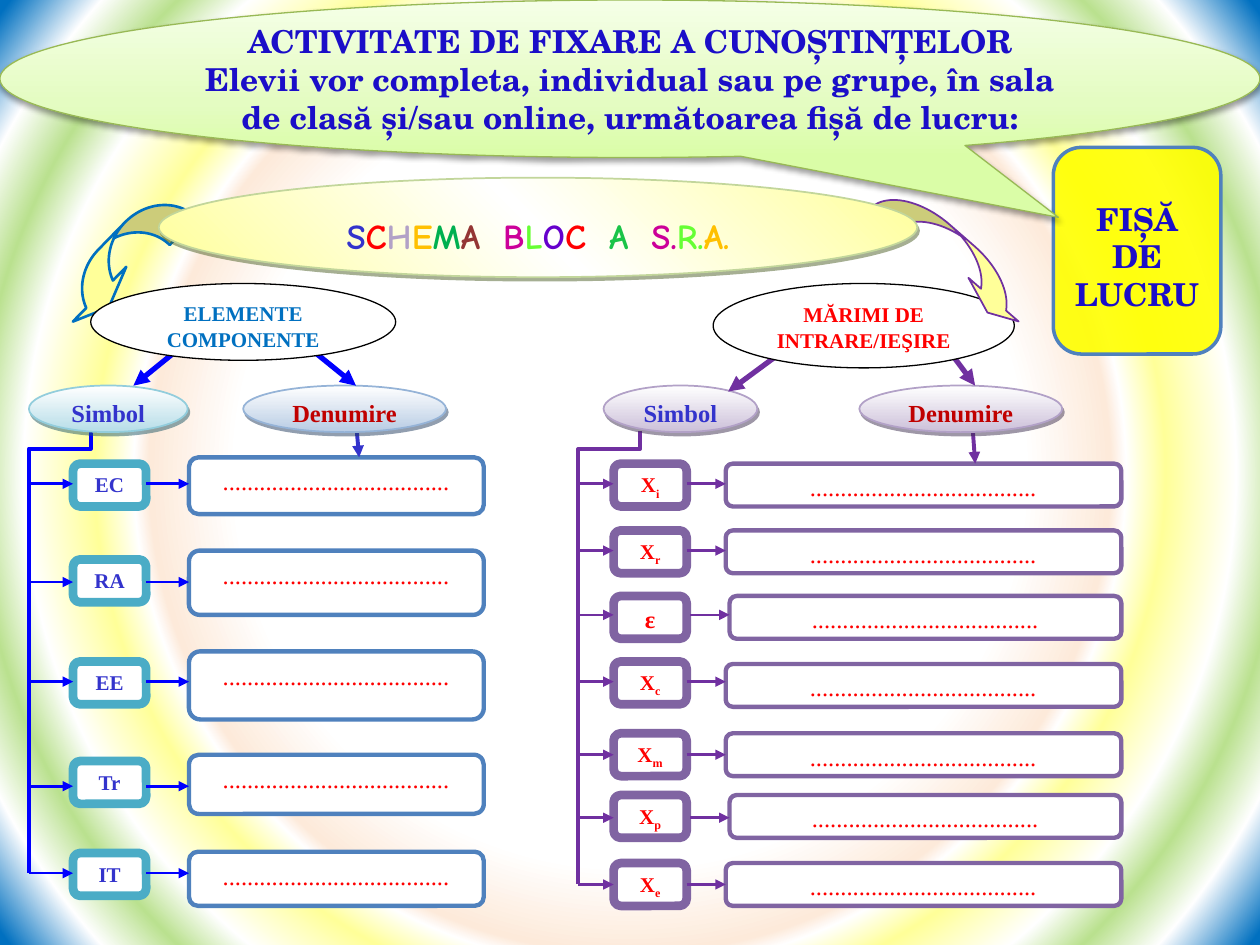
import pptx
import pptx.util
import pptx.dml.color
import pptx.enum.shapes
import pptx.enum.text
import pptx.oxml.ns
from lxml import etree

RGB = pptx.dml.color.RGBColor
KIND = pptx.enum.shapes.MSO_SHAPE
LINK = pptx.enum.shapes.MSO_CONNECTOR
ANCHOR = pptx.enum.text.MSO_ANCHOR
qn = pptx.oxml.ns.qn

# Colours
WHITE, BLACK = RGB(255, 255, 255), RGB(0, 0, 0)
RED, DARK, GOLD = RGB(255, 0, 0), RGB(0xC0, 0, 0), RGB(0xFF, 0xC0, 0)
YELLOW, CREAM, PEACH = RGB(255, 255, 0), RGB(255, 255, 0x99), RGB(0xFD, 0xEA, 0xDA)
BLUE, INDIGO, INK = RGB(0, 0, 255), RGB(0x33, 0x33, 0xCC), RGB(0x1B, 0x0E, 0xC8)
SKY, STEEL, TEAL = RGB(0, 0x70, 0xC0), RGB(0x4F, 0x81, 0xBD), RGB(0x4B, 0xAC, 0xC6)
PLUM, MAUVE, LILAC = RGB(0x70, 0x30, 0xA0), RGB(0x80, 0x64, 0xA2), RGB(0xB2, 0xA1, 0xC7)
GREEN, LIME, LEAF = RGB(0, 0xB0, 0x50), RGB(0x66, 0xFF, 0x33), RGB(0xBA, 0xE1, 0x8F)
BROWN, PINK = RGB(0x94, 0x36, 0x34), RGB(0xCC, 0, 0x99)
VIOLET, MINT = RGB(0x66, 0, 0xCC), RGB(0x1A, 0xC4, 0x47)
OLIVE, MOSS, SAGE = RGB(0x98, 0xB9, 0x55), RGB(0x4E, 0x61, 0x28), RGB(0xC2, 0xD6, 0x9B)
LIGHT = (RGB(0xDA, 0xFD, 0xA7), RGB(0xE4, 0xFC, 0xC2), RGB(0xF5, 0xFF, 0xE7))
# Ellipse styles: gradient end, line, shadow
AQUA = RGB(0xB6, 0xDD, 0xE8), RGB(0x92, 0xCD, 0xDC), RGB(0x20, 0x58, 0x67)
AZURE = RGB(0xB8, 0xCC, 0xE4), RGB(0x95, 0xB3, 0xD7), RGB(0x24, 0x3F, 0x60)
GRAPE = RGB(0xCC, 0xC0, 0xD9), LILAC, RGB(0x3F, 0x31, 0x51)

SERIF, SCHOOL, COMIC = "Times New Roman", "TeX Gyre Schola", "Comic Neue"
DOTS = "." * 37

# Grid of 100 columns by 75 rows
deck = pptx.Presentation()
deck.slide_width, deck.slide_height = pptx.util.Inches(10), pptx.util.Inches(7.5)
CELL = deck.slide_width // 100
slide = deck.slides.add_slide(deck.slide_layouts[6])


def grid(*cells):
    return [round(c * CELL) for c in cells]


def node(parent, tag, **attrs):
    return etree.SubElement(parent, qn("a:" + tag), {k: str(v) for k, v in attrs.items()})


def tint(parent, color, alpha=100):
    node(node(parent, "srgbClr", val=color), "alpha", val=alpha * 1000)


def blend(owner, fill, stops, angle=None):
    """Gradient of (percent, colour) stops; circular without an angle."""
    fill.gradient()
    grad = owner.find(".//" + qn("a:gradFill"))
    for child in list(grad):
        grad.remove(child)
    steps = node(grad, "gsLst")
    for pos, color in stops:
        tint(node(steps, "gs", pos=pos * 1000), color)
    if angle is None:
        node(node(grad, "path", path="circle"), "fillToRect", l=50000, t=50000, r=50000, b=50000)
    else:
        node(grad, "lin", ang=angle * 60000, scaled=0)


def shade(shape, color, alpha=50, blur=0, dist=2.2, angle=63):
    effects = shape._element.spPr.find(qn("a:effectLst"))
    tint(node(effects, "outerShdw", blurRad=round(blur * 12700), dist=round(dist * 12700),
              dir=angle * 60000, algn="ctr", rotWithShape=0), color, alpha)


def draw(kind, box, fill, line, width, angle=90, adj=()):
    shape = slide.shapes.add_shape(kind, *grid(*box))
    shape.shadow.inherit = False
    for i, value in enumerate(adj):
        shape.adjustments[i] = value
    if isinstance(fill, list):
        blend(shape._element, shape.fill, fill, angle)
    else:
        shape.fill.solid()
        shape.fill.fore_color.rgb = fill
    shape.line.color.rgb = line
    shape.line.width = pptx.util.Pt(width)
    return shape


def write(shape, text, size=12, color=RED, font=SERIF, bold=True, after=0, top=0.5,
          anchor=ANCHOR.TOP):
    """Fill a shape with lines; a line is a string or a list of (text, attributes, colour)."""
    frame = shape.text_frame
    frame.word_wrap, frame.vertical_anchor = True, anchor
    frame.margin_top = grid(top)[0]
    for i, line in enumerate(text if isinstance(text, list) else [text]):
        para = frame.add_paragraph() if i else frame.paragraphs[0]
        para.alignment = pptx.enum.text.PP_ALIGN.CENTER
        para.space_after = pptx.util.Pt(after)
        for part, attrs, ink in [(line, {}, color)] if isinstance(line, str) else line:
            run = para.add_run()
            run.text = part
            run.font.size, run.font.bold = pptx.util.Pt(size), bold
            run.font.name, run.font.color.rgb = font, ink
            for key, value in attrs.items():
                run.font._element.set(key, value)


def link(x1, y1, x2, y2, color, width=1.5, kind=LINK.STRAIGHT, head=True):
    wire = slide.shapes.add_connector(kind, *grid(x1, y1, x2, y2))
    wire.line.color.rgb, wire.line.width = color, pptx.util.Pt(width)
    if head:
        node(wire.line._get_or_add_ln(), "tailEnd", type="triangle")
    node(wire._element.spPr, "effectLst")
    return wire


def rail(x1, y1, x2, y2, color):
    """Elbow that leaves downwards, turned a quarter about its centre."""
    mx, my, dx, dy = (x1 + x2) / 2, (y1 + y2) / 2, (x1 - x2) / 2, (y2 - y1) / 2
    wire = link(mx - dy, my - dx, mx + dy, my + dx, color, 2.25, LINK.ELBOW, False)
    wire._element.spPr.find(qn("a:xfrm")).set("rot", "5400000")
    guides = wire._element.spPr.find(".//" + qn("a:avLst"))
    node(guides, "gd", name="adj1", fmla="val 4000")


def pill(box, text, color, style):
    end, line, dark = style
    shape = draw(KIND.OVAL, box, [(0, WHITE), (100, end)], line, 1)
    shade(shape, dark)
    write(shape, text, size=14, color=color, after=10)


def table(box, cols, rows, wire, drop, tag, edge, ink, styles):
    """Symbols on a rail, each leading to a blank answer."""
    x, y, w, h = box
    sign, span, name, code, reply = cols
    rail(x + 4.9, y + 3.6, x, y + rows[-1][2], wire)
    for text, top, mid, start, tall, nudge in rows:
        shape = draw(KIND.ROUNDED_RECTANGLE, (x + code, y + top, 5.8, 3.4), WHITE, tag, 5)
        label = [[(text[0], {}, ink), (text[1], {"baseline": "-25000"}, ink)]] \
            if text[0] == "X" else text
        write(shape, label, size=14 if text == "ε" else 12, color=ink, after=10)
        left = reply + nudge
        shape = draw(KIND.ROUNDED_RECTANGLE, (x + left, y + start, w - left, tall),
                     WHITE, edge, 2.5)
        write(shape, DOTS, size=14, bold=False, after=10)
        link(x, y + mid, x + code, y + mid, wire)
        link(x + code + 5.8 + nudge, y + mid, x + left, y + mid, wire)
    link(x + name + 9, y + 3.4, x + name + 9.2, y + rows[0][3], drop, 2.25)
    pill((x + sign, y, span, 3.7), "Simbol", INDIGO, styles[0])
    pill((x + name, y, 16.1, 3.7), "Denumire", DARK, styles[1])


def topic(box, text, color, wire, arrows):
    """Heading ellipse; arrows run between points given as shares of the box."""
    x, y, w, h = box
    for x1, y1, x2, y2 in arrows:
        link(x + x1 * w, y + y1 * h, x + x2 * w, y + y2 * h, wire, 3)
    write(draw(KIND.OVAL, box, WHITE, BLACK, 0.75), text, color=color, after=10)


def curl(box, turn, line, width, flip=False):
    shape = draw(KIND.CURVED_DOWN_ARROW, box, CREAM, line, width, adj=(0.8, 1.6, 0.33))
    shape.rotation = turn
    if flip:
        shape._element.spPr.find(qn("a:xfrm")).set("flipH", "1")


def banner(box):
    shape = draw(KIND.OVAL, box, [(0, CREAM), (50, WHITE), (100, CREAM)], SAGE, 1, 315)
    shade(shape, MOSS)
    inks = [("S", INDIGO), ("C", RED), ("H", LILAC), ("E", GOLD), ("M", GREEN), ("A", BROWN),
            (" ", BROWN), ("B", PINK), ("L", LIME), ("O", VIOLET), ("C", RED), (" ", RED),
            ("A", MINT), (" ", MINT), ("S.", PINK), ("R.", LIME), ("A.", GOLD)]
    runs = [(part, {"spc": "600"} if part == " " else {}, ink) for part, ink in inks]
    write(shape, [runs], size=20, font=COMIC, top=1.8)


def sheet(box):
    shape = draw(KIND.ROUNDED_RECTANGLE, box, YELLOW, STEEL, 2)
    color = shape._element.spPr.find(qn("a:solidFill") + "/" + qn("a:srgbClr"))
    node(color, "alpha", val=90000)
    write(shape, "FIȘĂ DE LUCRU", size=18, color=INK, font=SCHOOL, top=3.5)


def callout(box):
    shape = draw(KIND.OVAL_CALLOUT, box, list(zip((0, 35, 100), LIGHT)), OLIVE, 0.75, 270,
                 (0.34, 0.88))
    shade(shape, BLACK, 38, 3.1, 1.6, 90)
    write(shape, ["ACTIVITATE DE FIXARE A CUNOȘTINȚELOR",
                  "Elevii vor completa, individual sau pe grupe, în sala de clasă "
                  "și/sau online, următoarea fișă de lucru:"],
          size=18, color=INK, font=SCHOOL, anchor=ANCHOR.MIDDLE)


def main():
    blend(slide._element, slide.background.fill,
          [(50, WHITE), (61, PEACH), (63, WHITE), (68, CREAM), (77, WHITE), (83, LEAF),
           (90, WHITE), (99, SKY)])
    # Rows: text, tag top, wire, answer top, answer height, nudge
    parts = [("EC", 6.2, 7.8, 5.7, 4.5, 0), ("RA", 13.8, 15.6, 13.1, 5.1, 0),
             ("EE", 21.9, 23.5, 21.1, 5.4, 0), ("Tr", 29.8, 31.8, 29.3, 4.7, 0),
             ("IT", 37.1, 38.7, 37, 4.3, 0)]
    sizes = [(text, top, mid, 22.1 if text == "Xc" else top, 3.4, nudge)
             for text, top, mid, nudge in
             [("Xi", 6.2, 7.8, 0), ("Xr", 11.5, 13.1, 0), ("ε", 16.7, 18.2, 0.3),
              ("Xc", 21.9, 23.5, 0), ("Xm", 27.6, 29.3, 0), ("Xp", 32.5, 34.3, 0.3),
              ("Xe", 37.9, 39.6, 0)]]
    table((2.3, 30.6, 36.1, 41.3), (0, 12.6, 17, 3.5, 12.7), parts, BLUE, INDIGO, TEAL,
          STEEL, INDIGO, (AQUA, AZURE))
    table((45.9, 30.6, 43.1, 41.3), (2, 12.2, 22.3, 2.8, 11.7), sizes, PLUM, PLUM, MAUVE,
          MAUVE, RED, (GRAPE, GRAPE))
    # Headings
    curl((3.2, 18.7, 13, 3.8), 314.3, SKY, 1.5, True)
    topic((7.2, 22.5, 24.2, 6.1), "ELEMENTE COMPONENTE", SKY, BLUE,
          [(0.32, 0.75, 0.14, 1.33), (0.69, 0.75, 0.87, 1.33)])
    topic((56.6, 22.5, 23.9, 6.7), "MĂRIMI DE INTRARE/IEŞIRE", RED, PLUM,
          [(0.24, 0.78, 0.05, 1.28), (0.78, 0.78, 0.87, 1.21)])
    curl((68.2, 18.7, 15.1, 3.3), 41, PLUM, 1)
    banner((12.6, 14.1, 60.2, 7.9))
    sheet((83.6, 11.7, 13.3, 16.4))
    callout((0, 0, 100, 12.5))
    deck.save("out.pptx")


if __name__ == "__main__":
    main()
